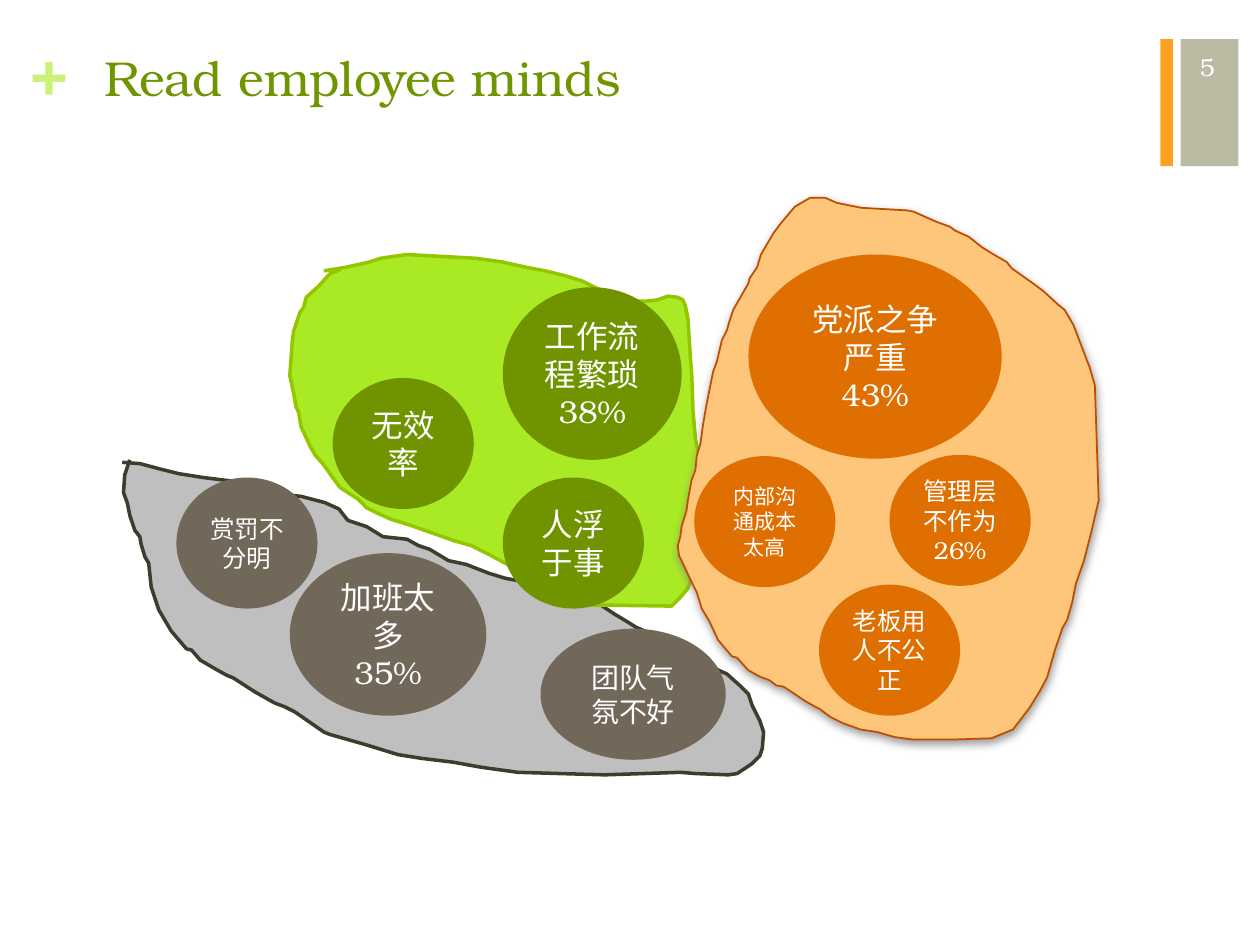
from dataclasses import dataclass
from typing import NamedTuple

from lxml.etree import SubElement
from pptx import Presentation
from pptx.dml.color import RGBColor as Rgb
from pptx.enum.shapes import MSO_SHAPE as Form
from pptx.enum.text import MSO_ANCHOR as Anchor, PP_ALIGN as Align
from pptx.oxml.ns import qn
from pptx.util import Cm, Length, Pt


@dataclass(frozen=True)
class Theme:
    font: str = "TeX Gyre Bonum"
    white: str = "FFFFFF"
    title: str = "6F9500"
    plus: str = "CAF278"
    tab: str = "BBBAA2"
    bar: str = "FEA022"
    orange: str = "DE6F00"
    green: str = "6F9400"
    brown: str = "71685A"
    shade: str = "808080"
    small: int = 12
    base: int = 14
    mid: int = 16
    large: int = 18
    head: int = 28
    sign: int = 36


class Box(NamedTuple):
    left: float
    top: float
    width: float
    height: float


class Zone(NamedTuple):
    fill: str
    line: str
    weight: float
    closed: bool
    points: list[tuple[int, int]]


class Bubble(NamedTuple):
    text: str
    box: Box
    fill: str
    size: int


THEME = Theme()
INCH = 2.54
GRID = Cm(INCH / 100)  # outline points are in hundredths of an inch

GRAY = Zone("BFBFBF", "3E3D2D", 2, False, [
    (97, 367), (111, 368), (126, 372), (142, 376), (161, 379), (185, 382), (205, 387),
    (213, 390), (229, 393), (239, 394), (258, 399), (269, 404), (276, 413), (291, 418),
    (304, 426), (323, 428), (332, 433), (341, 436), (356, 445), (370, 448), (388, 455),
    (401, 459), (417, 462), (434, 468), (454, 471), (475, 479), (487, 487), (497, 493),
    (505, 498), (517, 503), (533, 512), (546, 518), (556, 522), (566, 530), (577, 535),
    (587, 544), (594, 551), (597, 560), (603, 572), (606, 581), (605, 594), (603, 600),
    (597, 606), (585, 614), (578, 615), (552, 614), (540, 613), (480, 615), (411, 613),
    (382, 609), (360, 605), (335, 602), (316, 599), (290, 591), (262, 583), (257, 581),
    (234, 565), (226, 561), (218, 558), (202, 549), (185, 538), (180, 536), (171, 531),
    (159, 524), (152, 516), (148, 515), (136, 501), (126, 484), (120, 466), (118, 447),
    (115, 442), (112, 432), (111, 426), (107, 421), (103, 409), (101, 399), (98, 391),
    (99, 377), (103, 365),
])
LIME = Zone("AAEA25", "94C600", 2, False, [
    (257, 215), (275, 212), (293, 208), (302, 205), (323, 202), (378, 205), (399, 208),
    (417, 212), (433, 215), (449, 219), (462, 223), (474, 229), (492, 235), (503, 239),
    (513, 239), (522, 238), (530, 235), (538, 236), (542, 238), (544, 243), (546, 253),
    (548, 285), (549, 297), (550, 326), (552, 349), (554, 358), (558, 385), (562, 405),
    (562, 419), (560, 432), (558, 438), (551, 453), (546, 467), (540, 474), (533, 481),
    (462, 480), (449, 476), (437, 468), (431, 466), (420, 458), (401, 447), (388, 440),
    (374, 433), (360, 429), (343, 423), (326, 417), (310, 412), (299, 407), (291, 403),
    (284, 396), (270, 387), (264, 379), (257, 369), (250, 361), (246, 354), (241, 343),
    (239, 339), (237, 327), (235, 323), (233, 312), (230, 298), (232, 271), (233, 263),
    (235, 257), (238, 248), (241, 244), (243, 236), (253, 227), (262, 217), (270, 214),
])
PEACH = Zone("FEC67A", "BF4D00", 1, True, [
    (643, 157), (631, 164), (620, 177), (614, 185), (604, 202), (601, 212), (595, 221),
    (594, 225), (582, 246), (579, 255), (577, 262), (573, 270), (569, 287), (566, 295),
    (563, 310), (561, 320), (558, 337), (556, 352), (553, 362), (552, 373), (549, 381),
    (546, 397), (545, 405), (541, 418), (540, 426), (538, 433), (539, 441), (542, 447),
    (548, 460), (553, 470), (557, 483), (563, 493), (570, 508), (581, 521), (585, 522),
    (594, 532), (603, 537), (611, 540), (616, 544), (622, 545), (634, 553), (640, 557),
    (651, 563), (659, 569), (669, 574), (683, 579), (696, 581), (710, 585), (725, 587),
    (755, 587), (787, 586), (804, 579), (817, 562), (825, 549), (831, 538), (835, 524),
    (837, 517), (843, 499), (847, 492), (851, 478), (854, 463), (860, 446), (866, 423),
    (872, 397), (869, 306), (865, 292), (852, 258), (845, 246), (840, 242), (828, 231),
    (820, 225), (803, 213), (799, 208), (787, 201), (779, 196), (769, 188), (758, 183),
    (754, 180), (743, 176), (725, 168), (720, 167), (684, 165), (664, 161), (655, 157),
])

WIDE, TALL = 1.12, 1.04  # the common bubble
BUBBLES = [
    Bubble("党派之争严重\n43%", Box(5.94, 2.02, 2.01, 1.62), THEME.orange, THEME.large),
    Bubble("工作流程繁琐\n38%", Box(3.99, 2.28, 1.42, 1.37), THEME.green, THEME.large),
    Bubble("内部沟通成本太高", Box(5.51, 3.62, WIDE, TALL), THEME.orange, THEME.small),
    Bubble("老板用人不公正", Box(6.5, 4.64, WIDE, TALL), THEME.orange, THEME.base),
    Bubble("管理层不作为\n26%", Box(7.06, 3.61, WIDE, TALL), THEME.orange, THEME.base),
    Bubble("加班太多\n35%", Box(2.3, 4.39, 1.56, 1.29), THEME.brown, THEME.large),
    Bubble("人浮于事", Box(3.99, 3.79, WIDE, TALL), THEME.green, THEME.large),
    Bubble("赏罚不分明", Box(1.4, 3.79, WIDE, TALL), THEME.brown, THEME.base),
    Bubble("无效率", Box(2.64, 3, WIDE, TALL), THEME.green, THEME.large),
    Bubble("团队气氛不好", Box(4.29, 4.99, 1.47, TALL), THEME.brown, THEME.mid),
]


def place(box: Box) -> list[Length]:
    return [Cm(INCH * side) for side in box]


def write(shape, text: str, *, size: int, color: str = THEME.white, bold: bool = False,
          align=Align.LEFT, anchor=Anchor.TOP, inset: float | None = None) -> None:
    frame = shape.text_frame
    frame.word_wrap = True
    frame.vertical_anchor = anchor
    if inset is not None:
        frame.margin_left = frame.margin_right = Cm(inset)
        frame.margin_top = frame.margin_bottom = Cm(inset)
    for row, line in enumerate(text.split("\n")):
        para = frame.add_paragraph() if row else frame.paragraphs[0]
        para.alignment = align
        run = para.add_run()
        run.text = line
        run.font.name = THEME.font
        run.font.size = Pt(size)
        run.font.bold = bold
        run.font.color.rgb = Rgb.from_string(color)


def paint(shape, fill: str) -> None:
    shape.shadow.inherit = False
    shape.fill.solid()
    shape.fill.fore_color.rgb = Rgb.from_string(fill)


def draw(slide, form, box: Box, fill: str):
    shape = slide.shapes.add_shape(form, *place(box))
    paint(shape, fill)
    shape.line.fill.background()
    return shape


def trace(slide, zone: Zone):
    pen = slide.shapes.build_freeform(*zone.points[0], scale=GRID)
    pen.add_line_segments(zone.points[1:], close=zone.closed)
    shape = pen.convert_to_shape()
    paint(shape, zone.fill)
    shape.line.color.rgb = Rgb.from_string(zone.line)
    shape.line.width = Pt(zone.weight)
    return shape


def shade(shape) -> None:
    """Cast a soft shadow straight down."""
    effects = shape.element.spPr.find(qn("a:effectLst"))
    cast = SubElement(effects, qn("a:outerShdw"), blurRad=str(Pt(5)), dist=str(Pt(2)),
                      dir=str(90 * 60000), rotWithShape="0")
    color = SubElement(cast, qn("a:srgbClr"), val=THEME.shade)
    SubElement(color, qn("a:alpha"), val="75000")


def label(slide, text: str, box: Box, **style) -> None:
    write(slide.shapes.add_textbox(*place(box)), text, **style)


def main() -> None:
    deck = Presentation()
    deck.slide_width, deck.slide_height = Cm(INCH * 10), Cm(INCH * 7.5)
    slide = deck.slides.add_slide(deck.slide_layouts[6])

    draw(slide, Form.RECTANGLE, Box(9.37, 0.31, 0.46, 1.01), THEME.tab)
    draw(slide, Form.RECTANGLE, Box(9.21, 0.31, 0.1, 1.01), THEME.bar)
    label(slide, "+", Box(0.24, 0.25, 0.29, 0.61), size=THEME.sign, color=THEME.plus,
          bold=True, inset=0)
    for zone in (GRAY, LIME):
        trace(slide, zone)
    shade(trace(slide, PEACH))

    label(slide, "Read employee minds", Box(0.73, 0.33, 8.08, 0.79), size=THEME.head,
          color=THEME.title)
    for item in BUBBLES:
        oval = draw(slide, Form.OVAL, item.box, item.fill)
        write(oval, item.text, size=item.size, align=Align.CENTER, anchor=Anchor.MIDDLE)
    label(slide, "5", Box(9.29, 0.33, 0.45, 0.4), size=THEME.base, align=Align.RIGHT,
          anchor=Anchor.MIDDLE)
    deck.save("out.pptx")


if __name__ == "__main__":
    main()
